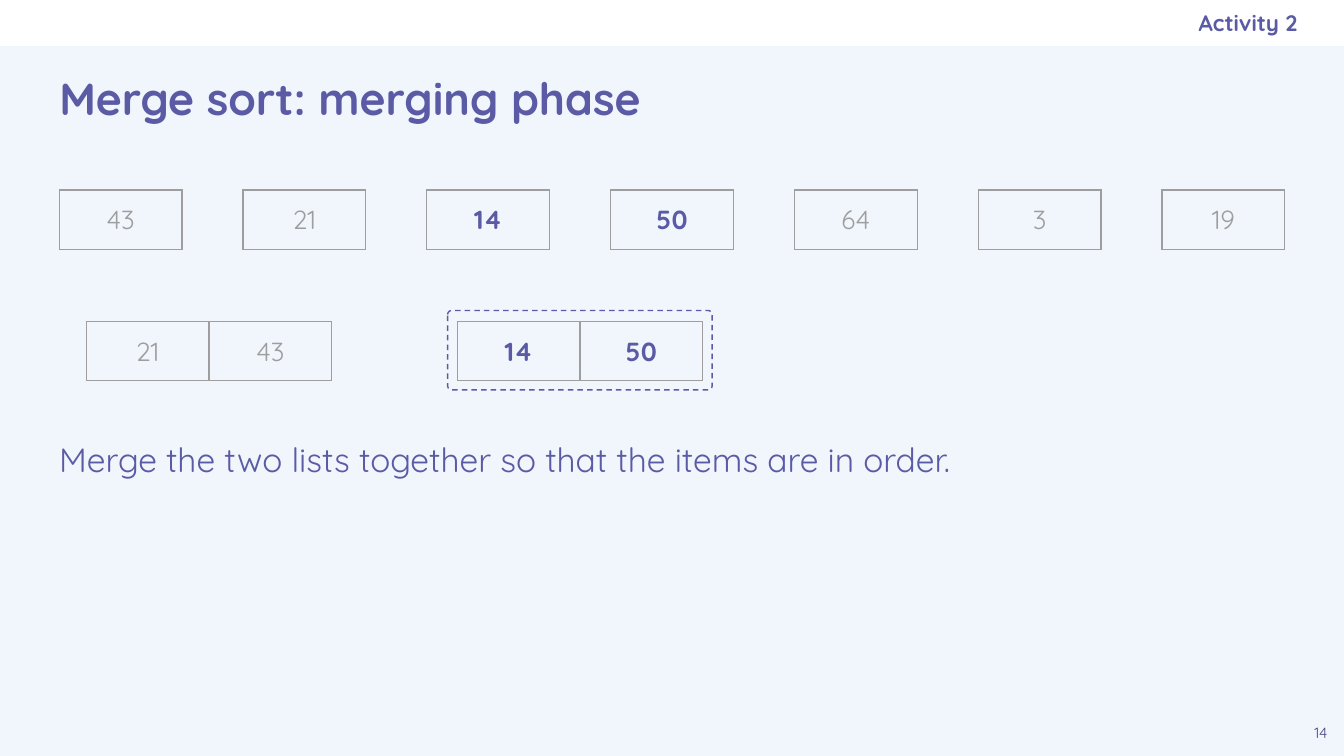
import pptx
import pptx.util
import pptx.dml.color
import pptx.enum.dml
import pptx.enum.shapes
import pptx.enum.text
import pptx.oxml

Cm = pptx.util.Cm
Pt = pptx.util.Pt
Rgb = pptx.dml.color.RGBColor.from_string
Align = pptx.enum.text.PP_ALIGN
Anchor = pptx.enum.text.MSO_ANCHOR
Kind = pptx.enum.shapes.MSO_SHAPE

TITLE = "Merge sort: merging phase"
LABEL = "Activity 2"
TASK = "Merge the two lists together so that the items are in order."
PAGE = "14"
ITEMS = ["43", "21", "14", "50", "64", "3", "19"]
PAIRS = [["21", "43"], ["14", "50"]]
BOLD = {"14", "50"}

THEME = {
    "font": "Quicksand",
    "ink": "5B5BA5",
    "gray": "9E9E9E",
    "page": "494985",
    "back": "F1F5FC",
    "white": "FFFFFF",
    "title": 24,
    "body": 18,
    "cell": 14,
    "label": 12,
    "small": 8,
    "line": 0.75,
}

WIDE, HIGH = 25.4, 14.29
BAR = 0.87
EDGE = 0.87
PAD = 0.25
CELL_W, CELL_H = 2.32, 1.08
ROW_X, ROW_Y, ROW_END = 1.12, 3.59, 24.28
PAIR_X, PAIR_Y, PAIR_STEP = 1.63, 6.08, 7.01
STEP = (ROW_END - CELL_W - ROW_X) / (len(ITEMS) - 1)


def write(frame, text, size, color=THEME["ink"], bold=False,
          align=Align.LEFT, anchor=Anchor.TOP, right=PAD, lead=1.0, after=0):
    frame.word_wrap = True
    frame.auto_size = pptx.enum.text.MSO_AUTO_SIZE.NONE
    frame.vertical_anchor = anchor
    frame.margin_left = frame.margin_top = frame.margin_bottom = Cm(PAD)
    frame.margin_right = Cm(right)
    para = frame.paragraphs[0]
    para.alignment = align
    para.line_spacing = lead
    para.space_before = Pt(0)
    para.space_after = Pt(after)
    run = para.add_run()
    run.text = text
    run.font.name = THEME["font"]
    run.font.size = Pt(THEME[size])
    run.font.bold = bold
    run.font.color.rgb = Rgb(color)


def place(shape, x, y, w, h):
    shape.left, shape.top = Cm(x), Cm(y)
    shape.width, shape.height = Cm(w), Cm(h)


def border(cell):
    props = cell._tc.get_or_add_tcPr()
    for spot, side in enumerate("LRTB"):
        line = pptx.oxml.parse_xml(
            f'<a:ln{side} xmlns:a="http://schemas.openxmlformats.org/drawingml/2006/main"'
            f' w="{Pt(THEME["line"])}"><a:solidFill><a:srgbClr val="{THEME["gray"]}"/>'
            f'</a:solidFill><a:prstDash val="solid"/></a:ln{side}>')
        props.insert(spot, line)


def grid(slide, items, x, y):
    table = slide.shapes.add_table(
        1, len(items), Cm(x), Cm(y), Cm(CELL_W * len(items)), Cm(CELL_H)).table
    table.first_row = table.horz_banding = False
    for cell, text in zip(table.rows[0].cells, items):
        cell.margin_left = cell.margin_right = Cm(PAD)
        cell.margin_top = cell.margin_bottom = Cm(PAD)
        cell.fill.background()
        border(cell)
        bold = text in BOLD
        write(cell.text_frame, text, "cell", bold=bold, align=Align.CENTER,
              color=THEME["ink"] if bold else THEME["gray"])


def main():
    deck = pptx.Presentation()
    deck.slide_width, deck.slide_height = Cm(WIDE), Cm(HIGH)
    slide = deck.slides.add_slide(deck.slide_layouts[0])
    slide.background.fill.solid()
    slide.background.fill.fore_color.rgb = Rgb(THEME["back"])
    shapes = slide.shapes
    title, label = shapes.title, slide.placeholders[1]

    bar = shapes.add_shape(Kind.RECTANGLE, 0, 0, Cm(WIDE), Cm(BAR))
    bar.shadow.inherit = False
    bar.fill.solid()
    bar.fill.fore_color.rgb = Rgb(THEME["white"])
    bar.line.fill.background()
    title.element.addprevious(bar.element)

    frame = shapes.add_shape(Kind.ROUNDED_RECTANGLE, Cm(8.46), Cm(5.87), Cm(5), Cm(1.5))
    frame.shadow.inherit = False
    frame.adjustments[0] = 0.05
    frame.fill.background()
    frame.line.color.rgb = Rgb(THEME["ink"])
    frame.line.width = Pt(THEME["line"])
    frame.line.dash_style = pptx.enum.dml.MSO_LINE.DASH

    place(title, EDGE, BAR, WIDE - 2 * EDGE, 1.96)
    write(title.text_frame, TITLE, "title", bold=True, anchor=Anchor.MIDDLE)
    place(label, 14.61, 0, 9.91, BAR)
    write(label.text_frame, LABEL, "label", bold=True, align=Align.RIGHT,
          anchor=Anchor.MIDDLE, right=0)

    for spot, item in enumerate(ITEMS):
        grid(slide, [item], ROW_X + spot * STEP, ROW_Y)
    for spot, pair in enumerate(PAIRS):
        grid(slide, pair, PAIR_X + spot * PAIR_STEP, PAIR_Y)

    task = shapes.add_textbox(Cm(EDGE), Cm(7.93), Cm(WIDE - 2 * EDGE), Cm(3.58))
    write(task.text_frame, TASK, "body", lead=1.15, after=16)
    page = shapes.add_textbox(Cm(WIDE - EDGE), Cm(13.42), Cm(EDGE), Cm(EDGE))
    write(page.text_frame, PAGE, "small", color=THEME["page"], align=Align.CENTER)

    deck.save("out.pptx")


if __name__ == "__main__":
    main()
